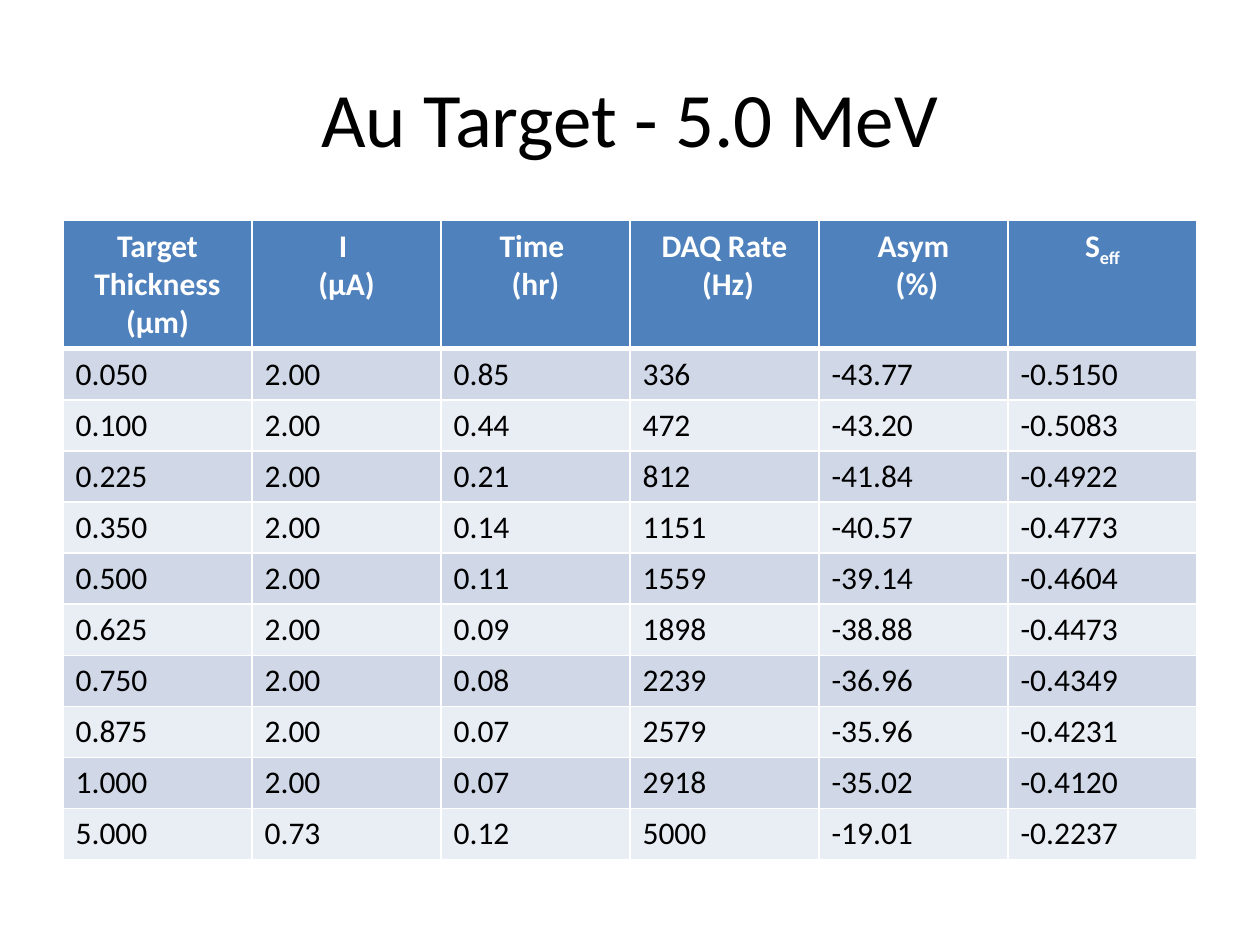
from dataclasses import dataclass

from lxml.etree import SubElement
from pptx import Presentation
from pptx.dml.color import RGBColor
from pptx.enum.text import MSO_ANCHOR, PP_ALIGN
from pptx.oxml.ns import qn
from pptx.util import Cm, Pt


@dataclass(frozen=True)
class Theme:
    font: str = "Calibri"
    title_size: int = 44
    table_size: int = 18
    text: str = "000000"
    header_text: str = "FFFFFF"
    header_fill: str = "4F81BD"
    bands: tuple = ("D0D8E8", "E9EDF4")
    border: str = "FFFFFF"
    thin: int = 1
    thick: int = 3


THEME = Theme()
LEFT, WIDTH = Cm(1.27), Cm(22.86)
HEADER_HEIGHT, ROW_HEIGHT = Cm(2.54), Cm(1.03)

HEADERS = ["Target Thickness (µm)", "I \n(µA)", "Time \n(hr)",
           "DAQ Rate\n (Hz)", "Asym\n (%)", "S"]
EFFECTIVE_SUBSCRIPT = "eff"
MEASUREMENTS = [
    ("0.050", "2.00", "0.85", "336", "-43.77", "-0.5150"),
    ("0.100", "2.00", "0.44", "472", "-43.20", "-0.5083"),
    ("0.225", "2.00", "0.21", "812", "-41.84", "-0.4922"),
    ("0.350", "2.00", "0.14", "1151", "-40.57", "-0.4773"),
    ("0.500", "2.00", "0.11", "1559", "-39.14", "-0.4604"),
    ("0.625", "2.00", "0.09", "1898", "-38.88", "-0.4473"),
    ("0.750", "2.00", "0.08", "2239", "-36.96", "-0.4349"),
    ("0.875", "2.00", "0.07", "2579", "-35.96", "-0.4231"),
    ("1.000", "2.00", "0.07", "2918", "-35.02", "-0.4120"),
    ("5.000", "0.73", "0.12", "5000", "-19.01", "-0.2237"),
]


def format_text(text_frame, size, color, align, bold=False):
    for paragraph in text_frame.paragraphs:
        paragraph.alignment = align
        for run in paragraph.runs:
            run.font.name = THEME.font
            run.font.size = Pt(size)
            run.font.bold = bold
            run.font.color.rgb = RGBColor.from_string(color)


def add_title(slide, text):
    title = slide.shapes.title
    title.left, title.top, title.width, title.height = LEFT, Cm(0.76), WIDTH, Cm(3.18)
    title.text_frame.text = text
    title.text_frame.vertical_anchor = MSO_ANCHOR.MIDDLE
    format_text(title.text_frame, THEME.title_size, THEME.text, PP_ALIGN.CENTER)


def set_borders(cell, top, bottom):
    properties = cell._tc.get_or_add_tcPr()
    widths = {"lnL": THEME.thin, "lnR": THEME.thin, "lnT": top, "lnB": bottom}
    for side, width in widths.items():
        line = SubElement(properties, qn(f"a:{side}"), w=str(Pt(width)))
        fill = SubElement(line, qn("a:solidFill"))
        SubElement(fill, qn("a:srgbClr"), val=THEME.border)


def fill_cell(cell, color):
    cell.fill.solid()
    cell.fill.fore_color.rgb = RGBColor.from_string(color)


def add_subscript(cell, text):
    run = cell.text_frame.paragraphs[0].add_run()
    run.text = text
    run._r.get_or_add_rPr().set("baseline", "-25000")


def format_header(cell):
    set_borders(cell, THEME.thin, THEME.thick)
    fill_cell(cell, THEME.header_fill)
    format_text(cell.text_frame, THEME.table_size, THEME.header_text,
                PP_ALIGN.CENTER, bold=True)


def format_measurement(cell, index):
    set_borders(cell, THEME.thin if index else THEME.thick, THEME.thin)
    fill_cell(cell, THEME.bands[index % 2])
    format_text(cell.text_frame, THEME.table_size, THEME.text, PP_ALIGN.LEFT)


def add_measurement_table(slide):
    height = HEADER_HEIGHT + ROW_HEIGHT * len(MEASUREMENTS)
    table = slide.shapes.add_table(len(MEASUREMENTS) + 1, len(HEADERS),
                                   LEFT, Cm(4.45), WIDTH, height).table
    header_row, *measurement_rows = table.rows

    header_row.height = HEADER_HEIGHT
    for cell, label in zip(header_row.cells, HEADERS):
        cell.text_frame.text = label
    add_subscript(table.cell(0, len(HEADERS) - 1), EFFECTIVE_SUBSCRIPT)
    for cell in header_row.cells:
        format_header(cell)

    for index, (row, values) in enumerate(zip(measurement_rows, MEASUREMENTS)):
        row.height = ROW_HEIGHT
        for cell, value in zip(row.cells, values):
            cell.text_frame.text = value
            format_measurement(cell, index)


def main():
    presentation = Presentation()
    presentation.slide_width, presentation.slide_height = Cm(25.4), Cm(19.05)
    title_only = presentation.slide_layouts.get_by_name("Title Only")
    slide = presentation.slides.add_slide(title_only)
    add_title(slide, "Au Target - 5.0 MeV")
    add_measurement_table(slide)
    presentation.save("out.pptx")


if __name__ == "__main__":
    main()
